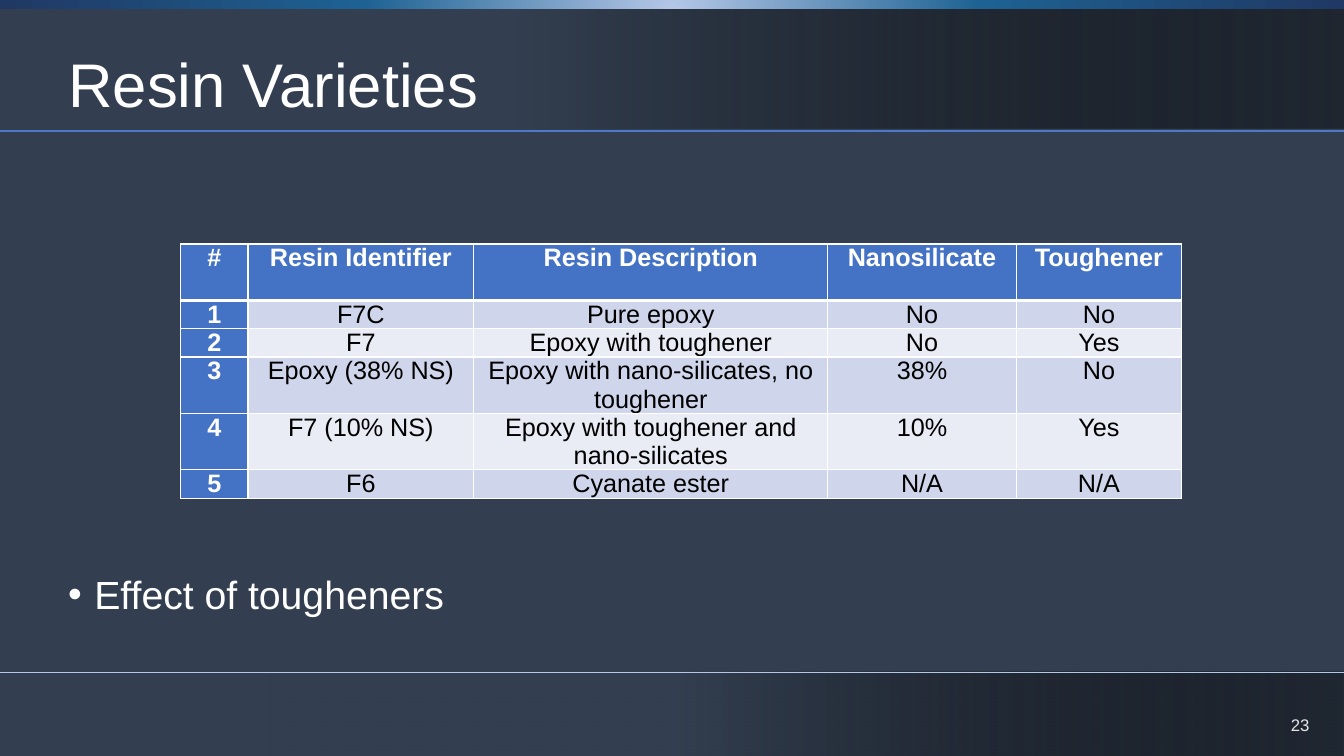
from lxml import etree
from pptx import Presentation
from pptx.dml.color import RGBColor
from pptx.enum.shapes import MSO_CONNECTOR, MSO_SHAPE
from pptx.enum.text import MSO_ANCHOR, MSO_AUTO_SIZE, PP_ALIGN
from pptx.oxml import parse_xml
from pptx.oxml.ns import nsdecls, qn
from pptx.util import Cm, Pt

RECTANGLE = MSO_SHAPE.RECTANGLE
STRAIGHT = MSO_CONNECTOR.STRAIGHT
TOP, MIDDLE = MSO_ANCHOR.TOP, MSO_ANCHOR.MIDDLE
LEFT, CENTER, RIGHT = PP_ALIGN.LEFT, PP_ALIGN.CENTER, PP_ALIGN.RIGHT
NO_AUTOFIT = MSO_AUTO_SIZE.NONE

FONT = "Arial"
TITLE_ONLY = 5
WIDTH, HEIGHT = 33.87, 19.05
COLORS = {
    "background": "333F50",
    "white": "FFFFFF",
    "black": "000000",
    "number": "E7E6E6",
    "navy": "203864",
    "teal": "1D6293",
    "pale": "B4C7E7",
    "rule": "4D79C7",
    "header": "4472C4",
    "odd": "CFD5EA",
    "even": "E9EBF5",
}
LINEAR = '<a:lin ang="0" scaled="0"/>'
RADIAL = '<a:path path="circle"><a:fillToRect l="50000" t="130000" r="50000" b="-30000"/></a:path>'

COLUMN_WIDTHS = [1.7, 5.69, 8.92, 4.75, 4.17]
ROW_HEIGHTS = [1.42, 0.71, 0.71, 1.42, 1.42, 0.71]
RESINS = [
    ["#", "Resin Identifier", "Resin Description", "Nanosilicate", "Toughener"],
    ["1", "F7C", "Pure epoxy", "No", "No"],
    ["2", "F7", "Epoxy with toughener", "No", "Yes"],
    ["3", "Epoxy (38% NS)", "Epoxy with nano-silicates, no toughener", "38%", "No"],
    ["4", "F7 (10% NS)", "Epoxy with toughener and nano-silicates", "10%", "Yes"],
    ["5", "F6", "Cyanate ester", "N/A", "N/A"],
]


def rgb(name):
    return RGBColor.from_string(COLORS[name])


def write(frame, text, size, color, align=LEFT, bold=False):
    para = frame.paragraphs[0]
    para.alignment = align
    span = para.add_run()
    span.text = text
    span.font.name = FONT
    span.font.size = Pt(size)
    span.font.bold = bold
    span.font.color.rgb = rgb(color)
    return para


def add_band(page, left, top, width, height, stops, direction):
    band = page.shapes.add_shape(RECTANGLE, Cm(left), Cm(top), Cm(width), Cm(height))
    band.shadow.inherit = False
    band.line.fill.background()
    band.fill.background()
    stop_xml = "".join(
        f'<a:gs pos="{position * 1000}"><a:srgbClr val="{COLORS[color]}">'
        f'<a:alpha val="{opacity * 1000}"/></a:srgbClr></a:gs>'
        for position, color, opacity in stops
    )
    gradient = parse_xml(
        f'<a:gradFill {nsdecls("a")} rotWithShape="1">'
        f"<a:gsLst>{stop_xml}</a:gsLst>{direction}</a:gradFill>"
    )
    properties = band.element.spPr
    properties.replace(properties.find(qn("a:noFill")), gradient)


def add_rule(page, top, color):
    rule = page.shapes.add_connector(STRAIGHT, Cm(0), Cm(top), Cm(WIDTH), Cm(top))
    rule.line.color.rgb = rgb(color)
    rule.line.width = Pt(1)
    etree.SubElement(rule.element.spPr, qn("a:effectLst"))


def add_text(page, left, top, width, height, anchor=TOP):
    box = page.shapes.add_textbox(Cm(left), Cm(top), Cm(width), Cm(height))
    box.text_frame.word_wrap = True
    box.text_frame.vertical_anchor = anchor
    return box.text_frame


def add_bullet(page):
    frame = add_text(page, 1.47, 14.38, 30.07, 2.54)
    properties = frame.paragraphs[0]._p.get_or_add_pPr()
    properties.set("marL", str(Cm(0.66)))
    properties.set("indent", str(-Cm(0.66)))
    etree.SubElement(properties, qn("a:buFont")).set("typeface", FONT)
    etree.SubElement(properties, qn("a:buChar")).set("char", "•")
    para = write(frame, "Effect of tougheners", 28, "white")
    para.line_spacing = 0.9
    para.space_after = Pt(6)


def set_title(page, text):
    title = page.shapes.title
    title.left, title.top, title.width, title.height = Cm(1.47), Cm(0.64), Cm(30.07), Cm(3.15)
    title.element.getparent().append(title.element)
    title.text_frame.vertical_anchor = MIDDLE
    title.text_frame.auto_size = NO_AUTOFIT
    write(title.text_frame, text, 44, "white").line_spacing = 0.9


def set_borders(cell, row):
    properties = cell._tc.get_or_add_tcPr()
    widths = {"L": 1, "R": 1, "T": 3 if row == 1 else 1, "B": 3 if row == 0 else 1}
    for side, width in widths.items():
        border = etree.SubElement(properties, qn(f"a:ln{side}"), w=str(Pt(width)))
        fill = etree.SubElement(border, qn("a:solidFill"))
        etree.SubElement(fill, qn("a:srgbClr")).set("val", COLORS["white"])


def fill_cell(cell, text, row, column):
    heading = row == 0 or column == 0
    cell.margin_left = cell.margin_right = Cm(0.18)
    cell.margin_top = cell.margin_bottom = 0
    set_borders(cell, row)
    cell.fill.solid()
    cell.fill.fore_color.rgb = rgb("header" if heading else "odd" if row % 2 else "even")
    write(cell.text_frame, text, 18, "white" if heading else "black", CENTER, heading)


def add_resin_table(page):
    table = page.shapes.add_table(
        len(RESINS), len(COLUMN_WIDTHS), Cm(4.55), Cm(6.15),
        Cm(sum(COLUMN_WIDTHS)), Cm(sum(ROW_HEIGHTS)),
    ).table
    table.first_col = True
    for column, width in zip(table.columns, COLUMN_WIDTHS):
        column.width = Cm(width)
    for row, height in zip(table.rows, ROW_HEIGHTS):
        row.height = Cm(height)
    for row, texts in enumerate(RESINS):
        for column, text in enumerate(texts):
            fill_cell(table.cell(row, column), text, row, column)


def main():
    deck = Presentation()
    deck.slide_width, deck.slide_height = Cm(WIDTH), Cm(HEIGHT)
    page = deck.slides.add_slide(deck.slide_layouts[TITLE_ONLY])
    page.background.fill.solid()
    page.background.fill.fore_color.rgb = rgb("background")

    add_band(page, 6.77, 16.92, 27.1, 2.13,
             [(38, "background", 100), (98, "black", 38)], LINEAR)
    add_band(page, 0, 0.1, WIDTH, 3.15,
             [(38, "background", 100), (100, "black", 38)], LINEAR)
    add_band(page, 0, 0, WIDTH, 0.22,
             [(0, "pale", 100), (46, "teal", 100), (100, "navy", 100)], RADIAL)
    add_rule(page, 3.3, "rule")
    add_rule(page, 16.94, "pale")

    set_title(page, "Resin Varieties")
    add_resin_table(page)
    add_bullet(page)
    write(add_text(page, 25.63, 17.75, 7.62, 1.02, MIDDLE), "23", 12, "number", RIGHT)
    deck.save("out.pptx")


if __name__ == "__main__":
    main()
